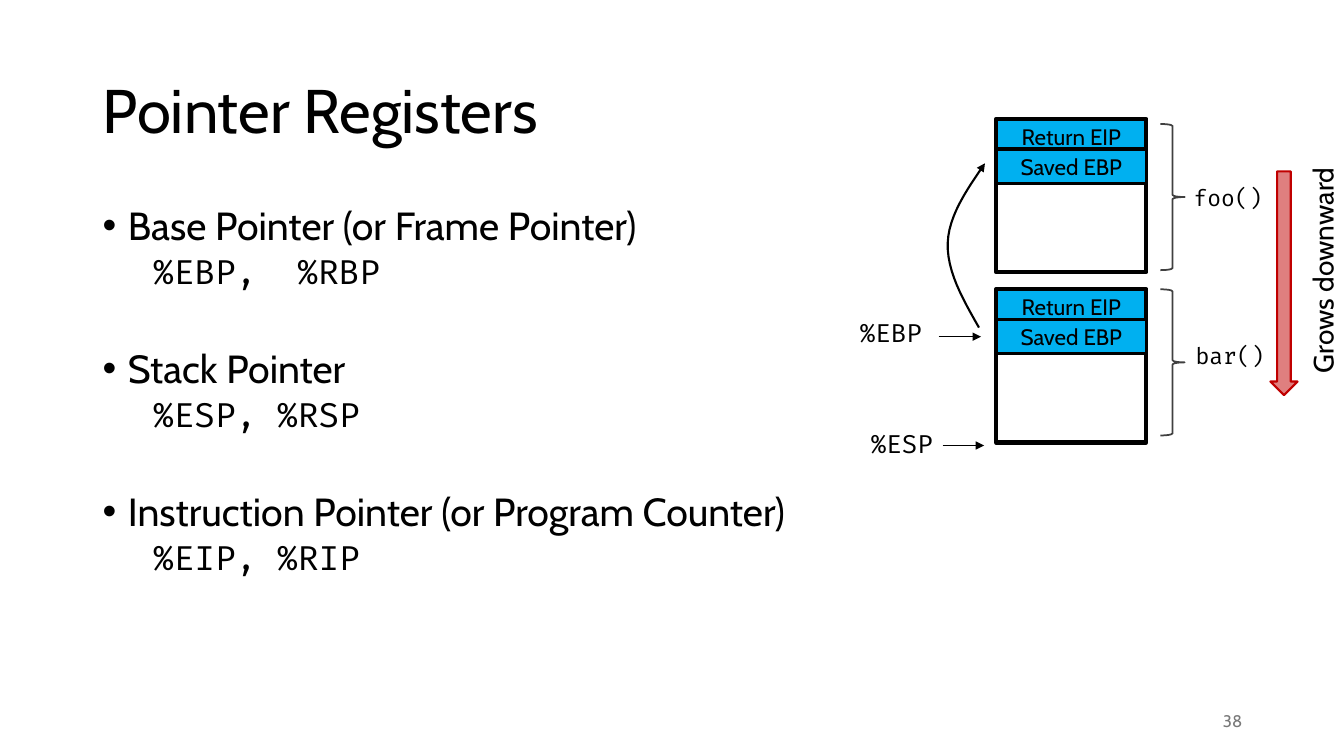
from dataclasses import dataclass

from lxml import etree
from pptx import Presentation
from pptx.dml.color import RGBColor
from pptx.enum.shapes import MSO_CONNECTOR, MSO_SHAPE
from pptx.enum.text import MSO_ANCHOR, PP_ALIGN
from pptx.oxml.ns import qn
from pptx.util import Inches, Pt

RECT, BRACE, ARROW = MSO_SHAPE.RECTANGLE, MSO_SHAPE.RIGHT_BRACE, MSO_SHAPE.DOWN_ARROW
STRAIGHT = MSO_CONNECTOR.STRAIGHT
TOP, MIDDLE = MSO_ANCHOR.TOP, MSO_ANCHOR.MIDDLE
LEFT, CENTER, RIGHT = PP_ALIGN.LEFT, PP_ALIGN.CENTER, PP_ALIGN.RIGHT

COLORS = {"black": "000000", "cell": "00B0F0", "brace": "404040",
          "growth": "C00000", "number": "797979"}
SANS, MONO = "Cabin", "Fira Code"


@dataclass
class Topic:
    heading: str
    registers: tuple[str, str]
    gap: float  # points between the two register names


@dataclass
class Frame:
    top: float
    brace_top: float
    label: str
    label_x: float
    label_y: float


@dataclass
class Pointer:
    name: str
    x: float
    y: float
    start: float
    end: float
    arrow_y: float


TOPICS = [
    Topic("Base Pointer (or Frame Pointer)", ("%EBP,", "%RBP"), 14.4),
    Topic("Stack Pointer", ("%ESP,", "%RSP"), 0),
    Topic("Instruction Pointer (or Program Counter)", ("%EIP,", "%RIP"), 0),
]
FRAMES = [
    Frame(1.18, 1.23, "foo()", 11.74, 1.78),
    Frame(2.87, 2.87, "bar()", 11.76, 3.35),
]
POINTERS = [
    Pointer("%EBP", 8.43, 3.1, 9.31, 9.73, 3.34),
    Pointer("%ESP", 8.54, 4.2, 9.35, 9.76, 4.42),
]
# Cubic curve pieces from the lower saved EBP to the upper one
SAVED_LINK = [
    ((9.71, 3.25), (9.55, 2.97), (9.39, 2.69), (9.4, 2.41)),
    ((9.4, 2.41), (9.41, 2.14), (9.59, 1.88), (9.77, 1.62)),
]
CURVE_STEPS = 12

prs = Presentation()
prs.slide_width, prs.slide_height = Inches(13.33), Inches(7.5)
s = prs.slides.add_slide(prs.slide_layouts[6])


def rgb(name: str) -> RGBColor:
    return RGBColor.from_string(COLORS[name])


def add_run(p, text: str, size: float, font: str = SANS, color: str = "black"):
    r = p.add_run()
    r.text = text
    r.font.size, r.font.name = Pt(size), font
    r.font.color.rgb = rgb(color)
    return r


def add_text(x: float, y: float, w: float, h: float, anchor=TOP, wrap: bool = True):
    sp = s.shapes.add_textbox(Inches(x), Inches(y), Inches(w), Inches(h))
    tf = sp.text_frame
    tf.word_wrap, tf.vertical_anchor = wrap, anchor
    return sp


def add_label(text: str, x: float, y: float, w: float, h: float, size: float) -> None:
    p = add_text(x, y, w, h, wrap=False).text_frame.paragraphs[0]
    add_run(p, text, size, MONO)


def style(sp, line: str, width: float, fill: str | None = None) -> None:
    sp.shadow.inherit = False
    sp.line.color.rgb, sp.line.width = rgb(line), Pt(width)
    if fill:
        sp.fill.solid()
        sp.fill.fore_color.rgb = rgb(fill)
    else:
        sp.fill.background()


def add_shape(kind, x: float, y: float, w: float, h: float,
              line: str, width: float, fill: str | None = None):
    sp = s.shapes.add_shape(kind, Inches(x), Inches(y), Inches(w), Inches(h))
    style(sp, line, width, fill)
    return sp


def add_arrowhead(sp) -> None:
    etree.SubElement(sp.line._get_or_add_ln(), qn("a:tailEnd"), type="triangle")


def set_paragraph(p, margin: float, indent: float, before: float, bullet: bool) -> None:
    pPr = p._p.get_or_add_pPr()
    pPr.set("marL", str(Inches(margin)))
    pPr.set("indent", str(Inches(indent)))
    p.line_spacing, p.space_before = 0.9, Pt(before)
    if bullet:
        etree.SubElement(pPr, qn("a:buFont"), typeface="Arial")
        etree.SubElement(pPr, qn("a:buChar"), char="•")
    else:
        etree.SubElement(pPr, qn("a:buNone"))


def bezier(a, b, c, d, t: float) -> tuple[int, int]:
    u = 1 - t
    x, y = (u**3 * a[i] + 3 * u * u * t * b[i] + 3 * u * t * t * c[i] + t**3 * d[i]
            for i in (0, 1))
    return Inches(x), Inches(y)


# Title
p = add_text(0.92, 0.4, 11.5, 1.45, MIDDLE).text_frame.paragraphs[0]
p.line_spacing = 0.9
add_run(p, "Pointer Registers", 44)

# Register list
tf = add_text(0.92, 2, 7.51, 4.76).text_frame
for i, topic in enumerate(TOPICS):
    p = tf.add_paragraph() if i else tf.paragraphs[0]
    set_paragraph(p, 0.25, -0.25, 41 if i else 0, True)
    add_run(p, topic.heading, 28)
    p = tf.add_paragraph()
    set_paragraph(p, 0.5, 0, 5, False)
    first, second = topic.registers
    add_run(p, first, 24, MONO)
    space = add_run(p, " ", 24, MONO)
    if topic.gap:
        space.font._element.set("spc", str(round(topic.gap * 100)))
    add_run(p, second, 24, MONO)

# Slide number
p = add_text(9.42, 6.95, 3, 0.4, MIDDLE).text_frame.paragraphs[0]
p.alignment = RIGHT
add_run(p, "38", 12, color="number")

# Stack frames with braces
for frame in FRAMES:
    add_shape(RECT, 9.88, frame.top + 0.57, 1.49, 0.95, "black", 3)
    for text, offset, width in (("Return EIP", 0, 3), ("Saved EBP", 0.3, 2.5)):
        sp = add_shape(RECT, 9.88, frame.top + offset, 1.49, 0.34, "black", width, "cell")
        sp.text_frame.vertical_anchor = MIDDLE
        p = sp.text_frame.paragraphs[0]
        p.alignment = CENTER
        add_run(p, text, 16)
    add_shape(BRACE, 11.51, frame.brace_top, 0.24, 1.45, "brace", 1.25)
    add_label(frame.label, frame.label_x, frame.label_y, 0.89, 0.37, 16)

# Link between saved base pointers
points = [bezier(*piece, k / CURVE_STEPS)
          for piece in SAVED_LINK for k in range(1, CURVE_STEPS + 1)]
start_x, start_y = SAVED_LINK[0][0]
builder = s.shapes.build_freeform(Inches(start_x), Inches(start_y))
builder.add_line_segments(points, close=False)
link = builder.convert_to_shape()
style(link, "black", 1.5)
add_arrowhead(link)

# Register pointers
for ptr in POINTERS:
    line = s.shapes.add_connector(STRAIGHT, Inches(ptr.start), Inches(ptr.arrow_y),
                                  Inches(ptr.end), Inches(ptr.arrow_y))
    line.line.color.rgb, line.line.width = rgb("black"), Pt(1)
    add_arrowhead(line)
    etree.SubElement(line._element.spPr, qn("a:effectLst"))
    add_label(ptr.name, ptr.x, ptr.y, 0.83, 0.4, 18)

# Growth direction
sp = add_shape(ARROW, 12.6, 1.7, 0.27, 2.22, "growth", 1.5, "growth")
fill_color = sp._element.spPr.find(qn("a:solidFill")).find(qn("a:srgbClr"))
etree.SubElement(fill_color, qn("a:alpha"), val="50000")
sp = add_text(11.69, 2.15, 2.86, 0.44)
sp.rotation = 270
p = sp.text_frame.paragraphs[0]
p.alignment = LEFT
add_run(p, "Grows downward", 20)

prs.save("out.pptx")
